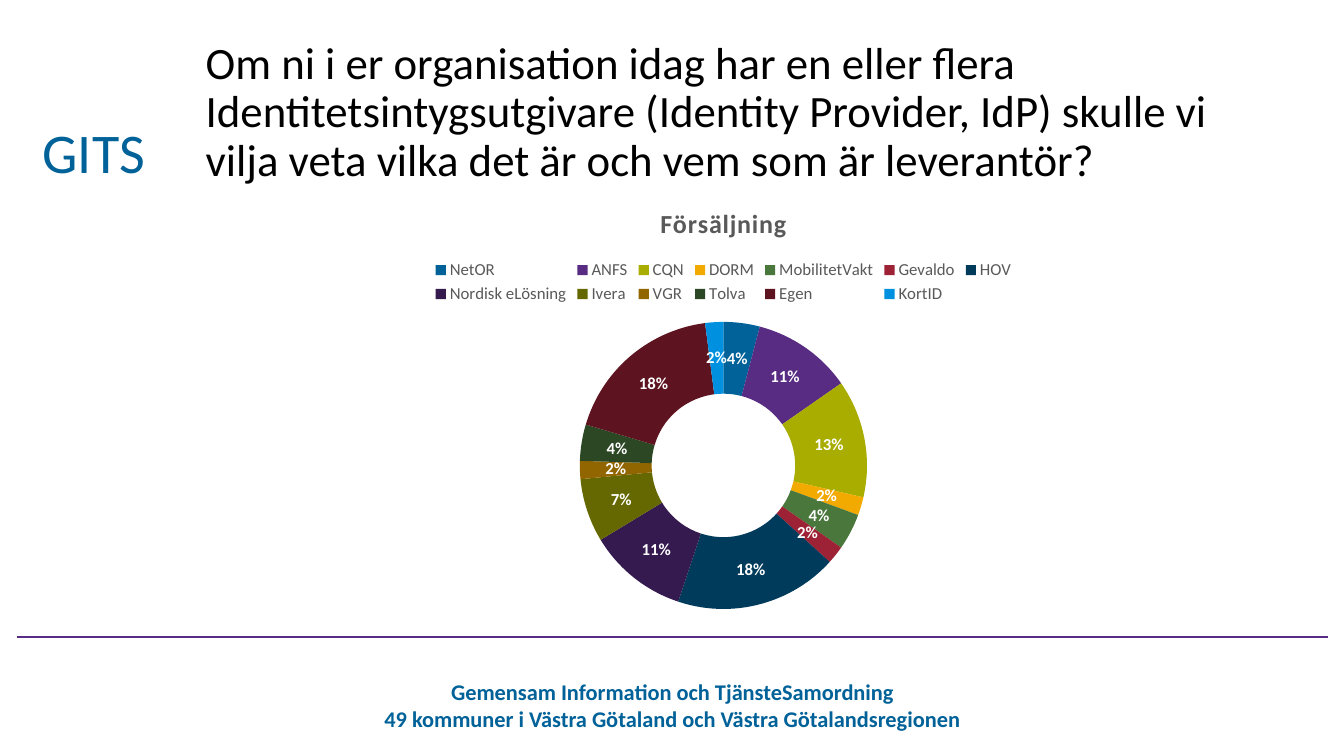
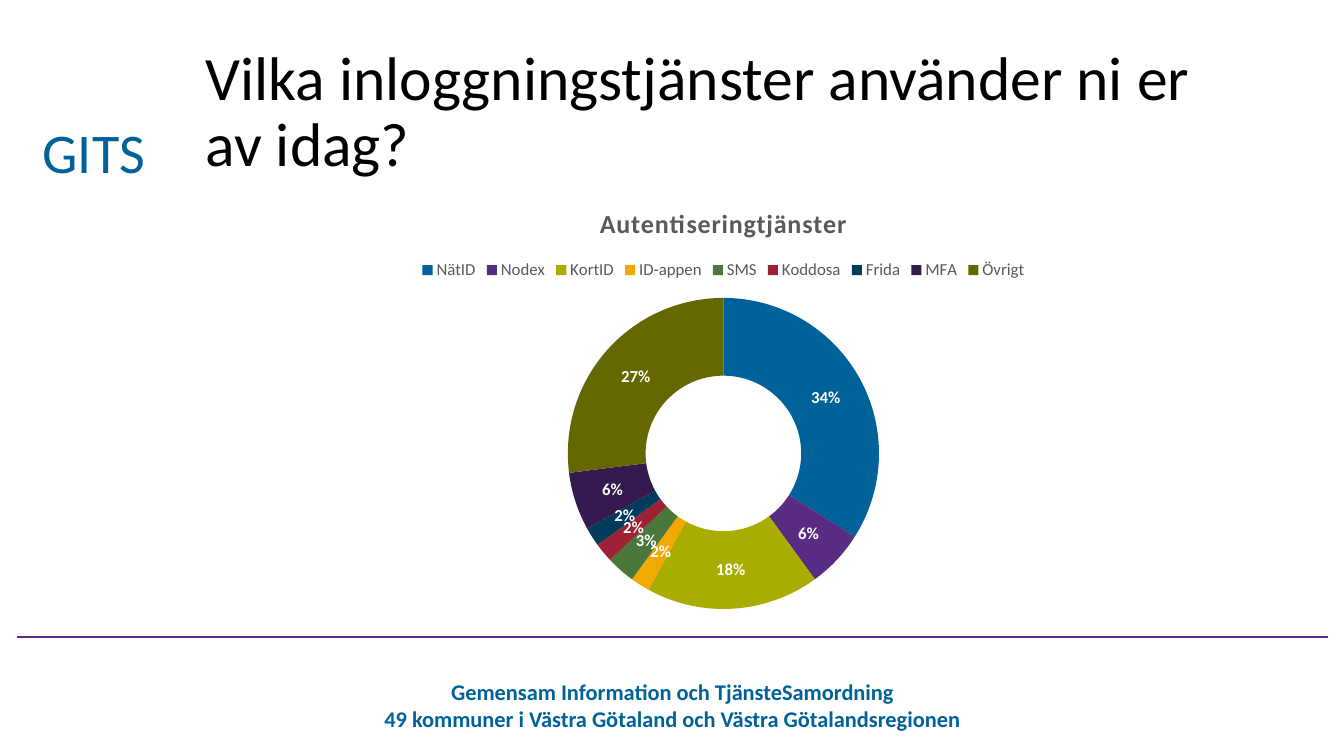
"""Build two survey slides, each with a title and a doughnut chart."""
import pptx
import pptx.chart.data
import pptx.dml.color
import pptx.enum.chart
import pptx.enum.shapes
import pptx.enum.text
import pptx.util
from lxml import etree
from pptx.util import Inches

FONT = "Calibri"
BLUE, PURPLE, GREY = "006298", "582C83", "595959"
SLICE_COLOURS = [BLUE, PURPLE, "A8AD00", "F2A900", "4A773C", "9D2235", "003B5B",
                 "351A4F", "656800", "916500", "2C4724", "5E1420", "0090E0"]
FOOTER = ["Gemensam Information och TjänsteSamordning",
          "49 kommuner i Västra Götaland och Västra Götalandsregionen"]
SURVEY = [
    {"question": "Om ni i er organisation idag har en eller flera "
                 "Identitetsintygsutgivare (Identity Provider, IdP) skulle vi "
                 "vilja veta vilka det är och vem som är leverantör?",
     "size": 32,
     "chart_title": "Försäljning",
     "answers": [("NetOR", 4), ("ANFS", 11), ("CQN", 13), ("DORM", 2),
                 ("MobilitetVakt", 4), ("Gevaldo", 2), ("HOV", 18),
                 ("Nordisk eLösning", 11), ("Ivera", 7), ("VGR", 2),
                 ("Tolva", 4), ("Egen", 18), ("KortID", 2)]},
    {"question": "Vilka inloggningstjänster använder ni er av idag?",
     "size": 44,
     "chart_title": "Autentiseringtjänster",
     "answers": [("NätID", 34), ("Nodex", 6), ("KortID", 18), ("ID-appen", 2),
                 ("SMS", 3), ("Koddosa", 2), ("Frida", 2), ("MFA", 6),
                 ("Övrigt", 27)]},
]
CONTENT_LEFT, CONTENT_WIDTH = Inches(1.94), Inches(10.47)
TITLE_TOP, TITLE_HEIGHT = Inches(0.4), Inches(1.45)
CHART_HEIGHT = Inches(4.33)


def colour(value):
    return pptx.dml.color.RGBColor.from_string(value)


def style_font(font, size, shade, bold=False):
    font.name = FONT
    font.size = pptx.util.Pt(size)
    font.bold = bold
    font.color.rgb = colour(shade)


def write(frame, lines, size, shade, bold=False, align="CENTER", spacing=None,
          tracking=None):
    for index, line in enumerate(lines):
        para = frame.add_paragraph() if index else frame.paragraphs[0]
        para.alignment = getattr(pptx.enum.text.PP_ALIGN, align)
        para.line_spacing = spacing
        span = para.add_run()
        span.text = line
        style_font(span.font, size, shade, bold)
        if tracking:
            span.font._element.set("spc", str(tracking))


def add_label(page, position, lines, **style):
    box = page.shapes.add_textbox(*map(Inches, position))
    box.text_frame.word_wrap = True
    write(box.text_frame, lines, **style)
    return box


def add_rule(page):
    rule = page.shapes.add_connector(
        pptx.enum.shapes.MSO_CONNECTOR.STRAIGHT,
        Inches(0.17), Inches(6.32), Inches(13.17), Inches(6.32))
    rule.line.color.rgb = colour(PURPLE)
    rule.line.width = pptx.util.Pt(1)
    etree.SubElement(rule.element.spPr, pptx.oxml.ns.qn("a:effectLst"))
    return rule


def prepare_layout(deck, layout):
    for holder in list(layout.placeholders):
        if holder.placeholder_format.type == pptx.enum.shapes.PP_PLACEHOLDER.TITLE:
            holder.left, holder.top = CONTENT_LEFT, TITLE_TOP
            holder.width, holder.height = CONTENT_WIDTH, TITLE_HEIGHT
        else:
            layout.shapes.element.remove(holder.element)
    page = deck.slides.add_slide(layout)
    shared = [
        add_label(page, (3.18, 6.68, 6.98, 0.64), FOOTER, size=16, shade=BLUE, bold=True),
        add_label(page, (0.31, 1.12, 1.24, 0.77), ["GITS"], size=40, shade=BLUE),
        add_rule(page),
    ]
    for shape in shared:
        layout.shapes.element.append(shape.element)
    return page


def add_title(page, text, size):
    frame = page.shapes.title.text_frame
    frame.word_wrap = True
    frame.auto_size = pptx.enum.text.MSO_AUTO_SIZE.NONE
    frame.vertical_anchor = pptx.enum.text.MSO_ANCHOR.MIDDLE
    write(frame, [text], size=size, shade="000000", align="LEFT", spacing=0.9)


def add_doughnut(page, title, answers):
    names, values = zip(*answers)
    data = pptx.chart.data.CategoryChartData()
    data.categories = names
    data.add_series(title, values)
    chart = page.shapes.add_chart(
        pptx.enum.chart.XL_CHART_TYPE.DOUGHNUT, CONTENT_LEFT,
        TITLE_TOP + TITLE_HEIGHT, CONTENT_WIDTH, CHART_HEIGHT, data).chart
    style_font(chart.font, 10, "000000")
    chart.has_title = True
    write(chart.chart_title.text_frame, [title], size=18.6, shade=GREY, bold=True,
          tracking=50)
    chart.has_legend = True
    chart.legend.position = pptx.enum.chart.XL_LEGEND_POSITION.TOP
    chart.legend.include_in_layout = False
    style_font(chart.legend.font, 12, GREY)
    plot = chart.plots[0]
    plot.vary_by_categories = True
    series = plot.series[0]
    for index, shade in enumerate(SLICE_COLOURS[:len(values)]):
        wedge = series.points[index].format
        wedge.fill.solid()
        wedge.fill.fore_color.rgb = colour(shade)
        wedge.line.fill.background()
    labels = series.data_labels
    labels.show_percentage = True
    labels.show_value = False
    labels.number_format = "0%"
    labels.number_format_is_linked = False
    style_font(labels.font, 12, "FFFFFF", bold=True)


def main():
    deck = pptx.Presentation()
    deck.slide_width, deck.slide_height = Inches(13.33), Inches(7.5)
    layout = deck.slide_layouts.get_by_name("Title Only")
    first = prepare_layout(deck, layout)
    for index, item in enumerate(SURVEY):
        page = deck.slides.add_slide(layout) if index else first
        add_title(page, item["question"], item["size"])
        add_doughnut(page, item["chart_title"], item["answers"])
    deck.save("out.pptx")


if __name__ == "__main__":
    main()
